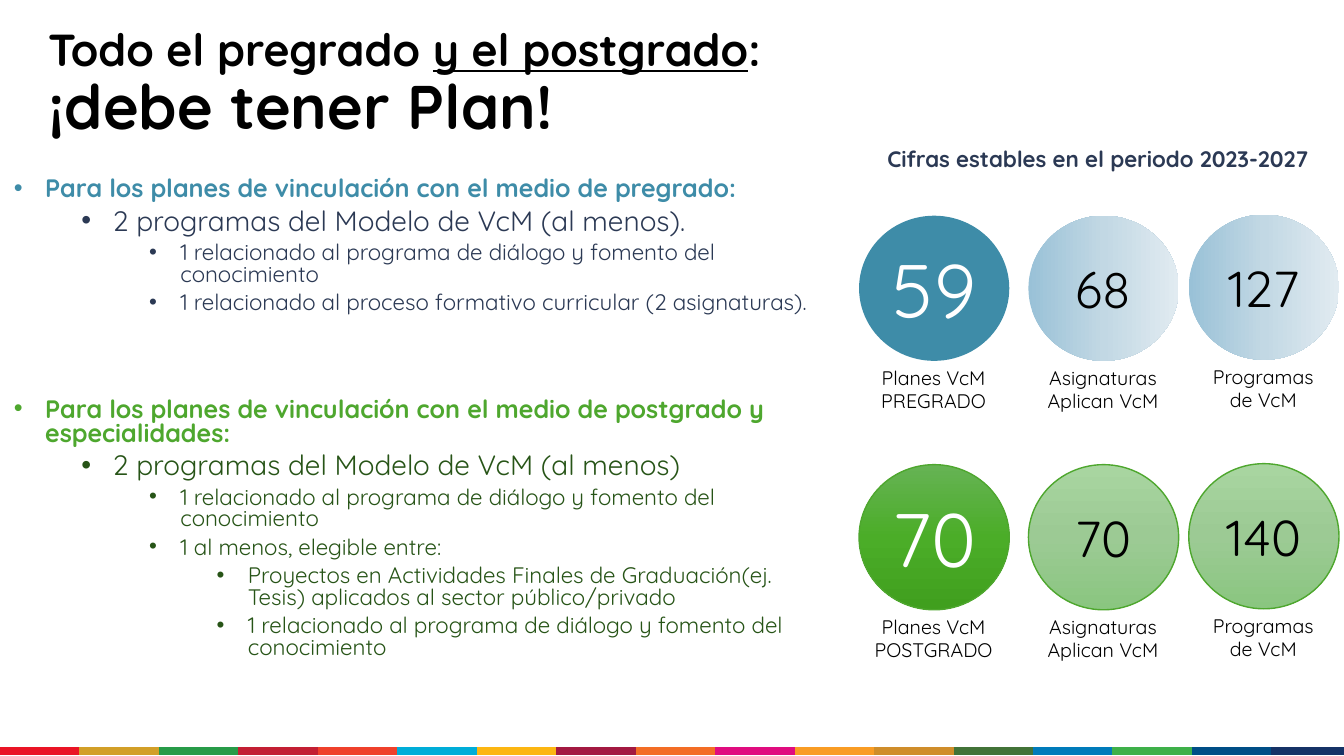
import copy

import pptx
import pptx.dml.color
import pptx.enum.shapes
import pptx.enum.text
import pptx.oxml.ns
import pptx.util
from lxml import etree

Inches = pptx.util.Inches
Pt = pptx.util.Pt
RGBColor = pptx.dml.color.RGBColor
qn = pptx.oxml.ns.qn
CENTER = pptx.enum.text.PP_ALIGN.CENTER
MIDDLE = pptx.enum.text.MSO_ANCHOR.MIDDLE

BLACK = RGBColor(0x00, 0x00, 0x00)
WHITE = RGBColor(0xFF, 0xFF, 0xFF)
NAVY = RGBColor(0x2B, 0x39, 0x54)
TEAL = RGBColor(0x3E, 0x8C, 0xA8)
GREEN = RGBColor(0x4E, 0xA7, 0x2E)
DARK_GREEN = RGBColor(0x27, 0x54, 0x17)
BLUE_FADE = [RGBColor.from_string(c) for c in ("99C1D7", "C2D8E4", "E1EBF1")]
GREEN_FADE = [RGBColor.from_string(c) for c in ("66B354", "4BAD28", "409F1E")]
PALE_GREEN_FADE = [RGBColor.from_string(c) for c in ("A8D5A0", "9CCA94", "8AC680")]
STRIPE = [RGBColor.from_string(c) for c in (
    "EA1425", "D29F28", "279B48", "C31F33", "EF402B", "00ADD8", "FCB612", "A31941", "F36D25",
    "E00C7F", "F99C24", "CF8D2A", "427338", "007BBA", "3EB049", "004E86", "153266")]

PLAN_ITEMS = [
    (0, "Para los planes de vinculación con el medio de pregrado:", 18, TEAL, 0),
    (1, "2 programas del Modelo de VcM (al menos).", 20, NAVY, 5),
    (2, "1 relacionado al programa de diálogo y fomento del conocimiento", 16, NAVY, 5),
    (2, "1 relacionado al proceso formativo curricular (2 asignaturas).", 16, NAVY, 5),
    (0, "Para los planes de vinculación con el medio de postgrado y especialidades:", 18, GREEN, 60),
    (1, "2 programas del Modelo de VcM (al menos)", 20, DARK_GREEN, 5),
    (2, "1 relacionado al programa de diálogo y fomento del conocimiento", 16, DARK_GREEN, 5),
    (2, "1 al menos, elegible entre:", 16, DARK_GREEN, 5),
    (3, "Proyectos en Actividades Finales de Graduación(ej. Tesis) aplicados al sector "
        "público/privado", 16, DARK_GREEN, 5),
    (3, "1 relacionado al programa de diálogo y fomento del conocimiento", 16, DARK_GREEN, 5),
]

COLUMNS = [(8.52, 0), (10.2, 0), (11.79, -0.01)]
ROWS = [
    (2.14, None, [
        ("59", [TEAL], "Planes VcM\nPREGRADO"),
        ("68", BLUE_FADE, "Asignaturas\nAplican VcM"),
        ("127", BLUE_FADE, "Programas\nde VcM")]),
    (4.61, GREEN, [
        ("70", GREEN_FADE, "Planes VcM\nPOSTGRADO"),
        ("70", PALE_GREEN_FADE, "Asignaturas\nAplican VcM"),
        ("140", PALE_GREEN_FADE, "Programas\nde VcM")]),
]


class Deck:
    font = "Quicksand"

    def __init__(self):
        self.prs = pptx.Presentation()
        self.prs.slide_width = Inches(13.33)
        self.prs.slide_height = Inches(7.5)
        self.s = self.prs.slides.add_slide(self.prs.slide_layouts[6])

    def style(self, r, size, color, bold=False):
        r.font.name = self.font
        r.font.size = Pt(size)
        r.font.color.rgb = color
        r.font.bold = bold

    def box(self, x, y, w, h, wrap=True):
        tf = self.s.shapes.add_textbox(Inches(x), Inches(y), Inches(w), Inches(h)).text_frame
        tf.word_wrap = wrap
        return tf

    def centered(self, tf, text, size, color, bold=False):
        tf.text = text
        for p in tf.paragraphs:
            p.alignment = CENTER
            for r in p.runs:
                self.style(r, size, color, bold)

    def stripe(self, colors, y, step):
        for i, color in enumerate(colors):
            end = min((i + 1) * step, 13.33)
            line = self.s.shapes.add_connector(
                pptx.enum.shapes.MSO_CONNECTOR.STRAIGHT,
                Inches(i * step), Inches(y), Inches(end), Inches(y))
            line.line.color.rgb = color
            line.line.width = Pt(6)
            etree.SubElement(line._element.spPr, qn("a:effectLst"))

    def title(self, x, y, w, h):
        tf = self.box(x, y, w, h)
        tf.vertical_anchor = MIDDLE
        p = tf.paragraphs[0]
        p.line_spacing = 0.9
        p.text = "Todo el pregrado "
        underlined = p.add_run()
        underlined.text = "y el postgrado"
        colon = p.add_run()
        colon.text = ":"
        p.add_line_break()
        last = p.add_run()
        last.text = "¡debe tener Plan!"
        for r in p.runs:
            self.style(r, 32, BLACK, True)
        underlined.font.underline = True
        last.font.size = Pt(44)

    def bullets(self, x, y, w, h, items):
        tf = self.box(x, y, w, h)
        for i, (level, text, size, color, before) in enumerate(items):
            p = tf.add_paragraph() if i else tf.paragraphs[0]
            p.text = text
            p.level = level
            p.line_spacing = 0.8
            p.space_before = Pt(before)
            pPr = p._p.get_or_add_pPr()
            pPr.set("marL", str(Inches(0.31 + 0.67 * level)))
            pPr.set("indent", str(Inches(-0.31)))
            etree.SubElement(pPr, qn("a:buFont"), typeface="Arial")
            etree.SubElement(pPr, qn("a:buChar"), char="•")
            self.style(p.runs[0], size, color, level == 0)

    def circle(self, x, y, text, size, color, fills, angle, outline):
        sp = self.s.shapes.add_shape(
            pptx.enum.shapes.MSO_SHAPE.OVAL, Inches(x), Inches(y), Inches(1.49), Inches(1.44))
        sp.shadow.inherit = False
        if len(fills) == 1:
            sp.fill.solid()
            sp.fill.fore_color.rgb = fills[0]
        else:
            sp.fill.gradient()
            sp.fill.gradient_angle = angle
            stops = sp._element.spPr.find(".//" + qn("a:gsLst"))
            stops.insert(1, copy.deepcopy(stops[0]))
            for i, stop in enumerate(sp.fill.gradient_stops):
                stop.position = i / 2
                stop.color.rgb = fills[i]
        if outline:
            sp.line.color.rgb = outline
            sp.line.width = Pt(1)
        else:
            sp.line.fill.background()
        sp.text_frame.vertical_anchor = MIDDLE
        self.centered(sp.text_frame, text, size, color)

    def figure(self, x, y, number, fills, caption, main, outline):
        size, color = (54, WHITE) if main else (36, BLACK)
        self.circle(x, y, number, size, color, fills, 270 if outline else 0, outline)
        self.centered(self.box(x + 0.02, y + 1.44, 1.44, 0.57, False), caption, 14, BLACK)


def main():
    deck = Deck()
    deck.stripe(STRIPE, 7.45, 12.61 / 16)
    deck.title(0.38, 0.12, 12.65, 1.45)
    deck.bullets(0.04, 1.72, 8.17, 5.22, PLAN_ITEMS)
    for top, outline, figures in ROWS:
        for i, ((x, dy), (number, fills, caption)) in enumerate(zip(COLUMNS, figures)):
            deck.figure(x, top + dy, number, fills, caption, i == 0, outline)
    deck.centered(deck.box(8.44, 1.39, 4.9, 0.37),
                  "Cifras estables en el periodo 2023-2027", 16, NAVY, True)
    deck.prs.save("out.pptx")


if __name__ == "__main__":
    main()
